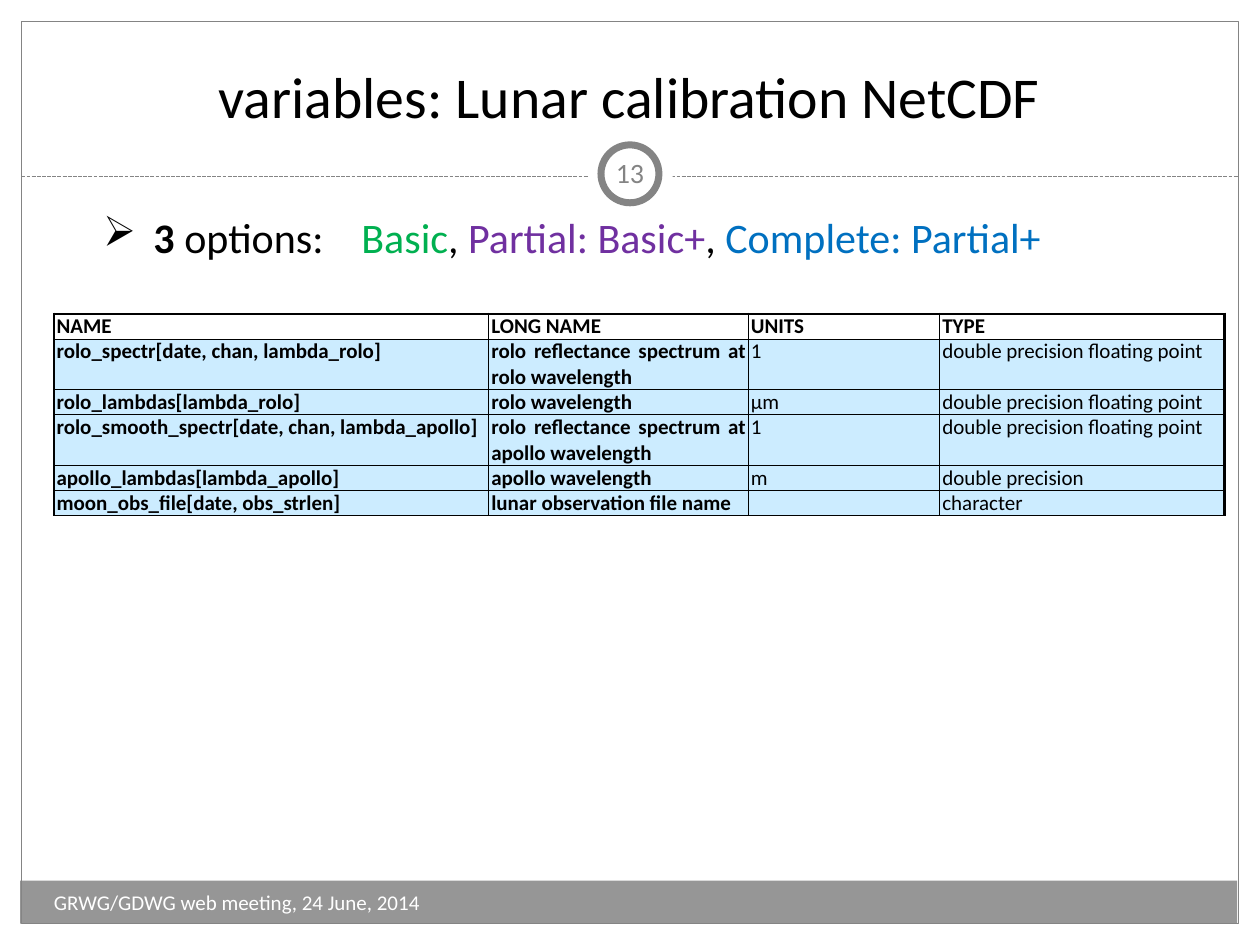
from lxml import etree
from pptx import Presentation
from pptx.dml.color import RGBColor
from pptx.enum import dml, shapes, text
from pptx.oxml import ns
from pptx.util import Inches, Pt

COLORS = {"white": "FFFFFF", "black": "000000", "band": "969696", "gray": "848484",
          "cell": "CCECFF", "green": "00B050", "purple": "7030A0", "blue": "0070C0"}
prs = Presentation()
prs.slide_width, prs.slide_height = Inches(10), Inches(7.5)
s = prs.slides.add_slide(prs.slide_layouts[6])


def add_run(p, words, size, color, bold=False):
    r = p.add_run()
    r.text = words
    r.font.name, r.font.size, r.font.bold = "Calibri", Pt(size), bold
    r.font.color.rgb = RGBColor.from_string(COLORS[color])


def add_textbox(box, anchor, align=None, inset=(0.1, 0.05)):
    tf = s.shapes.add_textbox(*map(Inches, box)).text_frame
    tf.word_wrap = True
    tf.vertical_anchor = anchor
    tf.margin_left = tf.margin_right = Inches(inset[0])
    tf.margin_top = tf.margin_bottom = Inches(inset[1])
    p = tf.paragraphs[0]
    p.alignment = align
    return p


rect, oval = shapes.MSO_SHAPE.RECTANGLE, shapes.MSO_SHAPE.OVAL
frame = [
    (rect, (0.16, 6.99, 9.66, 0.34), "band", 0),
    (rect, (0.17, 0.17, 9.66, 7.16), None, 0.75),
    (None, (0.17, 1.4, 9.83, 1.4), None, 0.75),
    (oval, (4.67, 1.05, 0.67, 0.67), "white", 0),
    (oval, (4.77, 1.15, 0.46, 0.46), "white", 4),
]
for kind, box, fill, width in frame:
    if kind is None:
        sp = s.shapes.add_connector(shapes.MSO_CONNECTOR.STRAIGHT, *map(Inches, box))
        etree.SubElement(sp._element.spPr, ns.qn("a:effectLst"))
        sp.line.dash_style = dml.MSO_LINE.SQUARE_DOT
    else:
        sp = s.shapes.add_shape(kind, *map(Inches, box))
        sp.shadow.inherit = False
        if fill:
            sp.fill.solid()
            sp.fill.fore_color.rgb = RGBColor.from_string(COLORS[fill])
        else:
            sp.fill.background()
    if width:
        sp.line.color.rgb = RGBColor.from_string(COLORS["gray"])
        sp.line.width = Pt(width)
    else:
        sp.line.fill.background()

top, middle, bottom = text.MSO_ANCHOR.TOP, text.MSO_ANCHOR.MIDDLE, text.MSO_ANCHOR.BOTTOM
center, justify = text.PP_ALIGN.CENTER, text.PP_ALIGN.JUSTIFY
p = add_textbox((0.33, 7.01, 3.92, 0.4), top)
add_run(p, "GRWG/GDWG web meeting, 24 June, 2014", 12, "white")
p = add_textbox((4.75, 1.13, 0.5, 0.48), middle, center, (0.05, 0.05))
add_run(p, "13", 16, "gray")
p = add_textbox((0.33, 0.25, 9.33, 0.83), bottom, center)
add_run(p, "variables: Lunar calibration NetCDF", 33, "black")

rows = [
    ("NAME", "LONG NAME", "UNITS", "TYPE"),
    ("rolo_spectr[date, chan, lambda_rolo]",
     "rolo reflectance spectrum at rolo wavelength", "1", "double precision floating point"),
    ("rolo_lambdas[lambda_rolo]", "rolo wavelength", "µm", "double precision floating point"),
    ("rolo_smooth_spectr[date, chan, lambda_apollo]",
     "rolo reflectance spectrum at apollo wavelength", "1", "double precision floating point"),
    ("apollo_lambdas[lambda_apollo]", "apollo wavelength", "m", "double precision"),
    ("moon_obs_file[date, obs_strlen]", "lunar observation file name", "", "character"),
]
widths = [3.45, 2.06, 1.52, 2.26]
heights = [0.2, 0.4, 0.2, 0.4, 0.2, 0.2]
tbl = s.shapes.add_table(len(rows), len(widths), Inches(0.43), Inches(2.49),
                         Inches(sum(widths)), Inches(sum(heights))).table
tbl.first_row = tbl.horz_banding = False
for col, width in zip(tbl.columns, widths):
    col.width = Inches(width)
for i, row in enumerate(rows):
    tbl.rows[i].height = Inches(heights[i])
    for j, words in enumerate(row):
        cell = tbl.cell(i, j)
        cell.margin_left = cell.margin_right = Inches(0.02)
        cell.margin_top = cell.margin_bottom = 0
        outer = {"L": j == 0, "R": j == len(widths) - 1, "T": i == 0, "B": False}
        for side, thick in outer.items():
            ln = etree.SubElement(cell._tc.get_or_add_tcPr(), ns.qn(f"a:ln{side}"),
                                  w=str(Pt(1.5 if thick else 0.5)))
            solid = etree.SubElement(ln, ns.qn("a:solidFill"))
            etree.SubElement(solid, ns.qn("a:srgbClr"), val=COLORS["black"])
        if i == 0:
            cell.fill.background()
        else:
            cell.fill.solid()
            cell.fill.fore_color.rgb = RGBColor.from_string(COLORS["cell"])
        p = cell.text_frame.paragraphs[0]
        if i == 0 or j < 3:
            p.alignment = justify
        if words:
            add_run(p, words, 12, "black", i == 0 or j < 2)
        else:
            etree.SubElement(p._p, ns.qn("a:endParaRPr"), sz="1200")

p = add_textbox((0.72, 1.51, 8.66, 0.58), top)
p.line_spacing = 1.3
pPr = p._p.get_or_add_pPr()
pPr.set("marL", str(Inches(0.4)))
pPr.set("indent", str(Inches(-0.4)))
etree.SubElement(pPr, ns.qn("a:buChar"), char="➢")
tabs = etree.SubElement(pPr, ns.qn("a:tabLst"))
etree.SubElement(tabs, ns.qn("a:tab"), pos=str(Inches(2.05)), algn="l")
add_run(p, "3", 24, "black", True)
for words, color in [(" options:\t", "black"), ("Basic", "green"), (", ", "black"),
                     ("Partial: Basic+", "purple"), (", ", "black"),
                     ("Complete: Partial+", "blue")]:
    add_run(p, words, 24, color)

prs.save("out.pptx")
